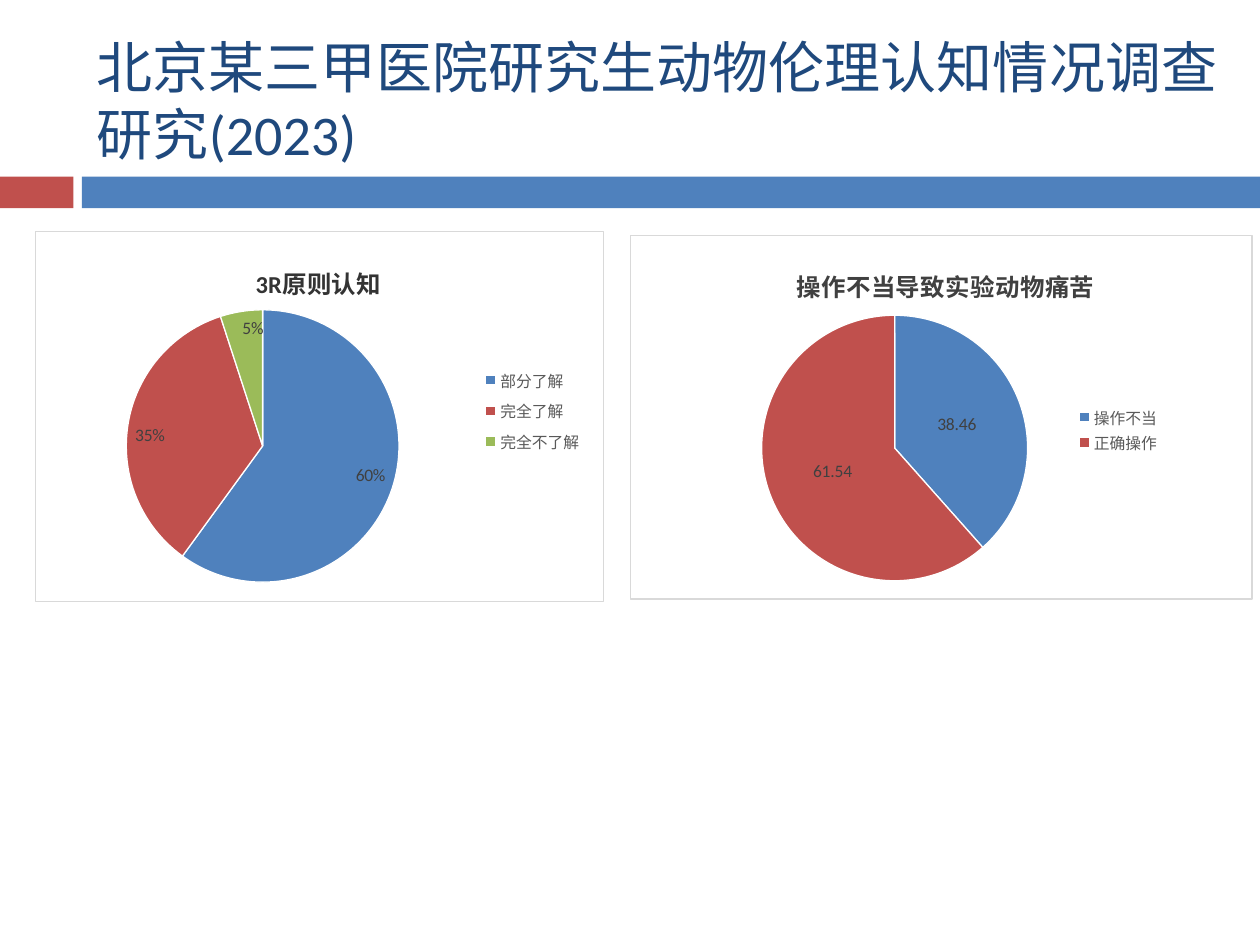
from dataclasses import dataclass

from lxml import etree
from pptx import Presentation
from pptx.chart.data import CategoryChartData
from pptx.dml.color import RGBColor
from pptx.enum.chart import XL_CHART_TYPE, XL_LABEL_POSITION, XL_LEGEND_POSITION
from pptx.enum.shapes import MSO_SHAPE
from pptx.enum.text import MSO_ANCHOR
from pptx.oxml import parse_xml
from pptx.util import Cm, Pt

PIE = XL_CHART_TYPE.PIE
RIGHT = XL_LEGEND_POSITION.RIGHT
INSIDE = XL_LABEL_POSITION.INSIDE_END
CENTER = XL_LABEL_POSITION.CENTER
RECT = MSO_SHAPE.RECTANGLE
MIDDLE = MSO_ANCHOR.MIDDLE

FONT = "Calibri"
COLORS = {
    "navy": "1F497D", "blue": "4F81BD", "red": "C0504D", "green": "9BBB59",
    "white": "FFFFFF", "edge": "D9D9D9", "black": "000000",
    "ink": "333333", "dark": "404040", "gray": "595959",
}
SLICES = ("blue", "red", "green")
C_URI = "http://schemas.openxmlformats.org/drawingml/2006/chart"
A_URI = "http://schemas.openxmlformats.org/drawingml/2006/main"


@dataclass
class Bar:
    left: float
    width: float
    color: str


@dataclass
class Pie:
    """Box is in cm; the plot, key and head places are parts of the chart."""
    box: tuple
    title: str
    tint: str
    cats: tuple
    vals: tuple
    percent: bool
    plot: tuple
    key: tuple
    head: tuple


BARS = (Bar(0, 1.48, "red"), Bar(1.65, 23.75, "blue"))
PIES = (
    Pie((0.7, 4.65, 11.48, 7.49), "3R原则认知", "ink",
        ("部分了解", "完全了解", "完全不了解"), (60, 35, 5), True,
        (0.16, 0.21, 0.48, 0.74), (0.78, 0.35, 0.19, 0.27), (0.38, 0.07)),
    Pie((12.7, 4.73, 12.55, 7.36), "操作不当导致实验动物痛苦", "dark",
        ("操作不当", "正确操作"), (38.46, 61.54), False,
        (0.21, 0.22, 0.43, 0.73), (0.71, 0.46, 0.15, 0.15), (0.26, 0.07)),
)


def rgb(name: str) -> RGBColor:
    return RGBColor.from_string(COLORS[name])


def style(font, size: float, color: str, bold: bool = False) -> None:
    font.name = FONT
    font.size = Pt(size)
    font.bold = bold
    font.color.rgb = rgb(color)


def place(part, spot: tuple, index: int, inner: bool = False) -> None:
    """Give a chart part a fixed place, as parts of the chart's size."""
    for old in part.findall(f"{{{C_URI}}}layout"):
        part.remove(old)
    layout = etree.Element(f"{{{C_URI}}}layout")
    manual = etree.SubElement(layout, f"{{{C_URI}}}manualLayout")
    tags = [("layoutTarget", "inner")] if inner else []
    tags += [("xMode", "edge"), ("yMode", "edge"), *zip("xywh", spot)]
    for tag, val in tags:
        etree.SubElement(manual, f"{{{C_URI}}}{tag}", val=str(val))
    part.insert(index, layout)


def frame(chart) -> None:
    """Fill and outline the whole chart area."""
    area = parse_xml(
        f'<c:spPr xmlns:c="{C_URI}" xmlns:a="{A_URI}">'
        f'<a:solidFill><a:srgbClr val="{COLORS["white"]}"/></a:solidFill>'
        f'<a:ln w="{Pt(0.75)}"><a:solidFill><a:srgbClr val="{COLORS["edge"]}"/>'
        '</a:solidFill></a:ln></c:spPr>')
    chart.element.find(f"{{{C_URI}}}chart").addnext(area)


def draw_bar(slide, bar: Bar) -> None:
    shape = slide.shapes.add_shape(
        RECT, Cm(bar.left), Cm(3.56), Cm(bar.width), Cm(0.64))
    shape.shadow.inherit = False
    shape.fill.solid()
    shape.fill.fore_color.rgb = rgb(bar.color)
    shape.line.fill.background()


def draw_title(slide, text: str) -> None:
    box = slide.shapes.add_textbox(Cm(1.7), Cm(0.64), Cm(23.3), Cm(2.74))
    body = box.text_frame
    body.word_wrap = True
    body.vertical_anchor = MIDDLE
    run = body.paragraphs[0].add_run()
    run.text = text
    style(run.font, 32, "navy")


def draw_pie(slide, pie: Pie) -> None:
    data = CategoryChartData()
    data.categories = pie.cats
    data.add_series("Series 1", pie.vals)
    chart = slide.shapes.add_chart(PIE, *map(Cm, pie.box), data).chart
    style(chart.font, 10, "black")
    frame(chart)

    chart.has_title = True
    head = chart.chart_title
    run = head.text_frame.paragraphs[0].add_run()
    run.text = pie.title
    style(run.font, 14, pie.tint, True)
    place(head._element, pie.head, 1)

    chart.has_legend = True
    key = chart.legend
    key.position = RIGHT
    key.include_in_layout = False
    style(key.font, 9, "gray")
    place(key._element, pie.key, 1)

    plot = chart.plots[0]
    plot.vary_by_categories = True
    place(plot._element.getparent(), pie.plot, 0, True)
    series = plot.series[0]
    for i, color in enumerate(SLICES[:len(pie.vals)]):
        form = series.points[i].format
        form.fill.solid()
        form.fill.fore_color.rgb = rgb(color)
        form.line.color.rgb = rgb("white")
        form.line.width = Pt(0.75)

    labels = series.data_labels
    labels.show_percentage = pie.percent
    labels.show_value = not pie.percent
    labels.position = INSIDE if pie.percent else CENTER
    labels.number_format = "0%" if pie.percent else "General"
    labels.number_format_is_linked = False
    style(labels.font, 10, "dark")


def main() -> None:
    deck = Presentation()
    deck.slide_width, deck.slide_height = Cm(25.4), Cm(19.05)
    slide = deck.slides.add_slide(deck.slide_layouts[6])
    for bar in BARS:
        draw_bar(slide, bar)
    draw_title(slide, "北京某三甲医院研究生动物伦理认知情况调查研究(2023)")
    for pie in PIES:
        draw_pie(slide, pie)
    deck.save("out.pptx")


if __name__ == "__main__":
    main()
